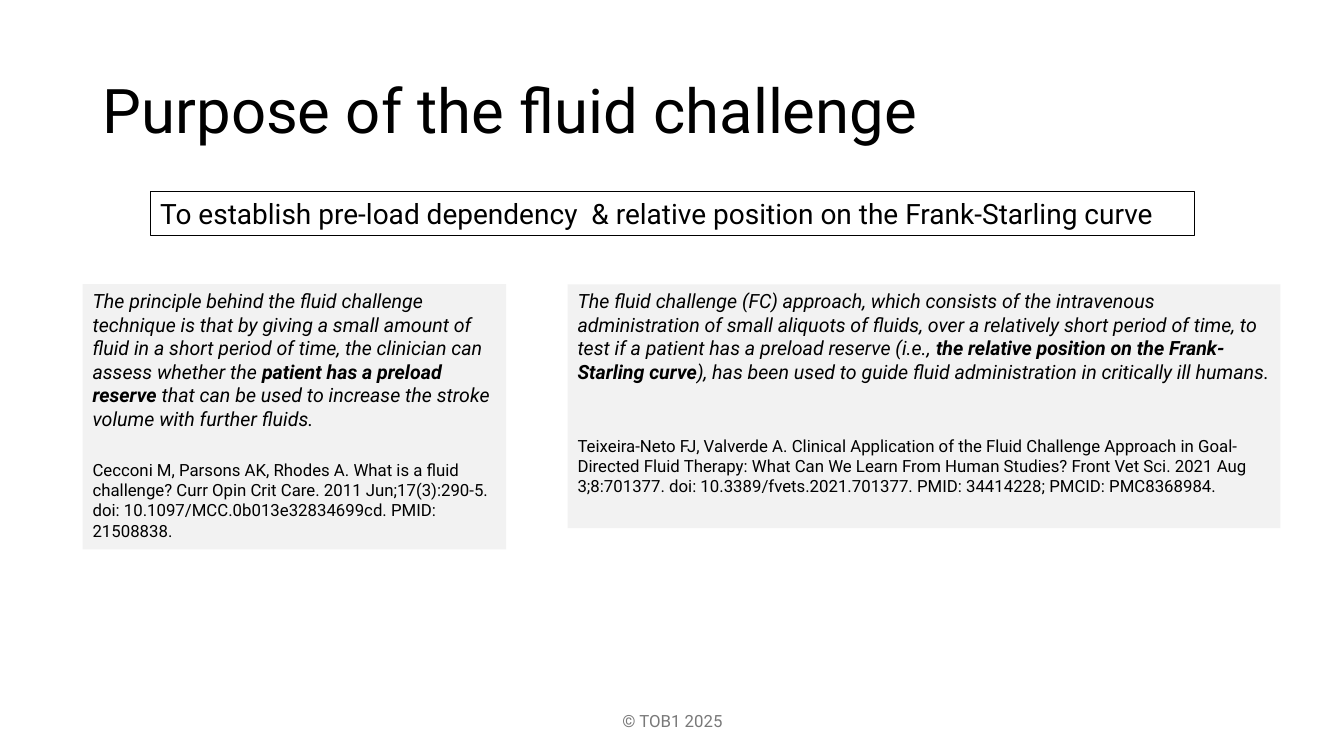
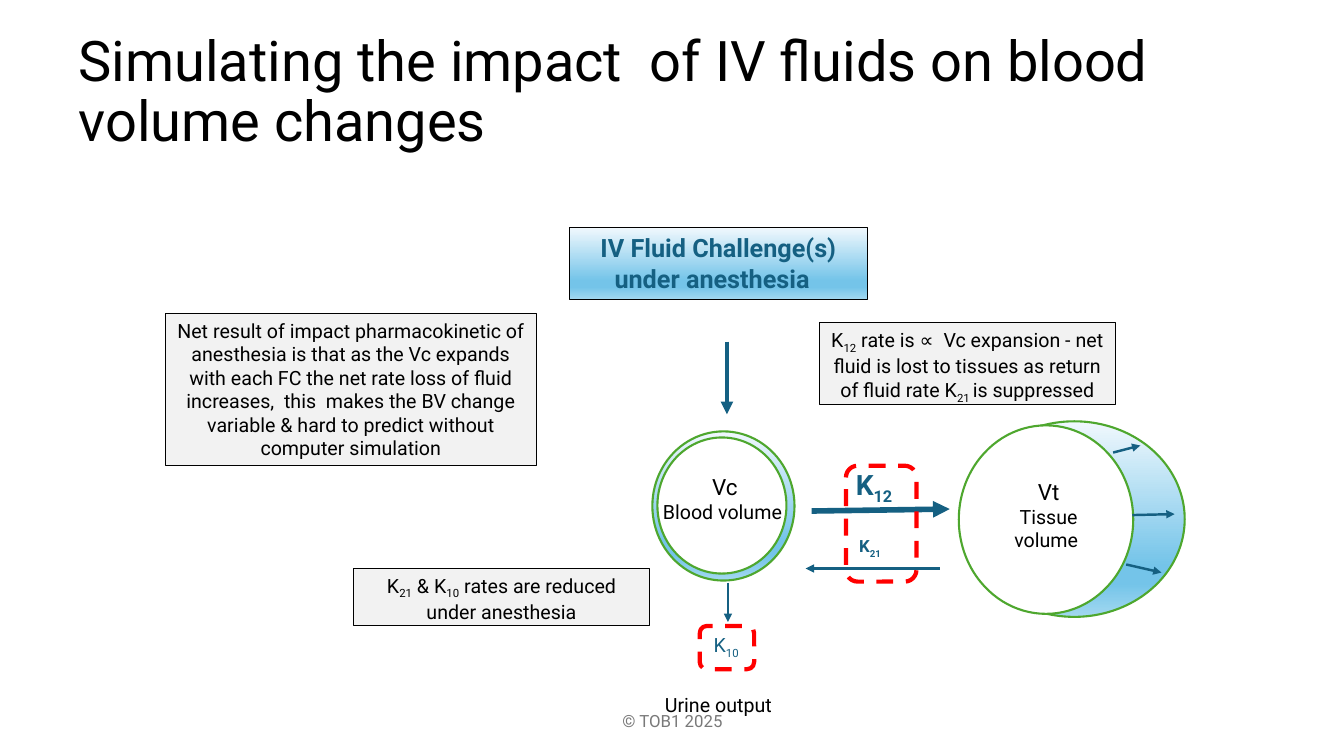
"""Build two slides on the fluid challenge and the simulation of blood volume changes."""
import pptx
import pptx.util
import pptx.dml.color
import pptx.enum.dml
import pptx.enum.shapes
import pptx.enum.text
import pptx.oxml.ns
import lxml.etree

Inches = pptx.util.Inches
Pt = pptx.util.Pt
RGBColor = pptx.dml.color.RGBColor
qn = pptx.oxml.ns.qn
SHAPE = pptx.enum.shapes.MSO_SHAPE
ALIGN = pptx.enum.text.PP_ALIGN
ANCHOR = pptx.enum.text.MSO_ANCHOR

FONT = "Roboto"
BLACK = RGBColor(0x00, 0x00, 0x00)
WHITE = RGBColor(0xFF, 0xFF, 0xFF)
GREY = RGBColor(0xF2, 0xF2, 0xF2)
FOOTER_GREY = RGBColor(0x79, 0x79, 0x79)
TEAL = RGBColor(0x15, 0x60, 0x82)
GREEN = RGBColor(0x4E, 0xA7, 0x2E)
RED = RGBColor(0xFF, 0x00, 0x00)
SKY = [
    (0, RGBColor(0xF0, 0xF8, 0xFD)),
    (74, RGBColor(0x74, 0xC4, 0xE9)),
    (83, RGBColor(0x74, 0xC4, 0xE9)),
    (100, RGBColor(0xA2, 0xD8, 0xF0)),
]


def add_text(tf, paras, color=BLACK, align=ALIGN.CENTER, anchor=ANCHOR.TOP):
    """Fill a frame with (size, runs) paragraphs; run flags are b, i and s for subscript."""
    tf.word_wrap = True
    tf.auto_size = pptx.enum.text.MSO_AUTO_SIZE.NONE
    tf.vertical_anchor = anchor
    for i, (size, runs) in enumerate(paras):
        p = tf.add_paragraph() if i else tf.paragraphs[0]
        p.alignment = align
        for text, flags in runs:
            r = p.add_run()
            r.text = text
            r.font.name = FONT
            r.font.size = Pt(size)
            r.font.color.rgb = color
            r.font.bold = "b" in flags
            r.font.italic = "i" in flags
            if "s" in flags:
                r._r.get_or_add_rPr().set("baseline", "-25000")


def add_box(s, kind, at, fill=None, line=None, width=0.75):
    """Add a preset shape with a plain, gradient or empty fill."""
    sp = s.shapes.add_shape(kind, *map(Inches, at))
    sp.shadow.inherit = False
    if fill is None:
        sp.fill.background()
    elif fill is SKY:
        sp.fill.gradient()
        sp.fill.gradient_angle = 270
        stops = sp._element.spPr.find(".//" + qn("a:gsLst"))
        for old in list(stops):
            stops.remove(old)
        for pos, color in SKY:
            gs = lxml.etree.SubElement(stops, qn("a:gs"), pos=str(pos * 1000))
            lxml.etree.SubElement(gs, qn("a:srgbClr"), val=str(color))
    else:
        sp.fill.solid()
        sp.fill.fore_color.rgb = fill
    if line is None:
        sp.line.fill.background()
    else:
        sp.line.color.rgb = line
        sp.line.width = Pt(width)
    return sp


prs = pptx.Presentation()
prs.slide_width = Inches(13.33)
prs.slide_height = Inches(7.5)

slides = []
for title, size, left, top in [
    ("Purpose of the fluid challenge", 44, 0.92, 0.4),
    ("Simulating the impact  of IV fluids on blood volume changes", 40, 0.68, 0.2),
]:
    s = prs.slides.add_slide(prs.slide_layouts[5])
    sp = s.shapes.title
    sp.left, sp.top, sp.width, sp.height = map(Inches, (left, top, 11.5, 1.45))
    add_text(sp.text_frame, [(size, [(title, "")])], align=ALIGN.LEFT, anchor=ANCHOR.MIDDLE)
    sp.text_frame.paragraphs[0].line_spacing = 0.9
    footer = s.shapes.add_textbox(*map(Inches, (4.42, 6.95, 4.5, 0.4)))
    add_text(footer.text_frame, [(12, [("© TOB1 2025", "")])], FOOTER_GREY, anchor=ANCHOR.MIDDLE)
    slides.append(s)

s = slides[0]
quotes = [
    ((0.82, 2.82, 4.2, 2.63), 21, [
        ("The principle behind the fluid challenge technique is that by giving a small amount of fluid "
         "in a short period of time, the clinician can assess whether the ", "i"),
        ("patient has a preload reserve", "bi"),
        (" that can be used to increase the stroke volume with further fluids.", "i")],
     "Cecconi M, Parsons AK, Rhodes A. What is a fluid challenge? Curr Opin Crit Care. "
     "2011 Jun;17(3):290-5. doi: 10.1097/MCC.0b013e32834699cd. PMID: 21508838."),
    ((5.63, 2.82, 7.07, 2.42), 37.5, [
        ("The fluid challenge (FC) approach, which consists of the intravenous administration of small "
         "aliquots of fluids, over a relatively short period of time, to test if a patient has a "
         "preload reserve (i.e., ", "i"),
        ("the relative position on the Frank-Starling curve", "bi"),
        ("), has been used to guide fluid administration in critically ill humans.", "i")],
     "Teixeira-Neto FJ, Valverde A. Clinical Application of the Fluid Challenge Approach in "
     "Goal-Directed Fluid Therapy: What Can We Learn From Human Studies? Front Vet Sci. "
     "2021 Aug 3;8:701377. doi: 10.3389/fvets.2021.701377. PMID: 34414228; PMCID: PMC8368984."),
]
for at, gap, quote, citation in quotes:
    tf = add_box(s, SHAPE.RECTANGLE, at, GREY).text_frame
    add_text(tf, [(14, quote), (12, [(citation, "")])], align=ALIGN.LEFT)
    tf.paragraphs[1].space_before = Pt(gap)

purpose = add_box(s, SHAPE.RECTANGLE, (1.49, 1.9, 10.36, 0.44), line=BLACK)
add_text(purpose.text_frame, [(20, [
    ("To establish pre-load dependency  & relative position on the Frank-Starling curve", "")])],
    align=ALIGN.LEFT)

s = slides[1]
for at, fill in [
    ((6.47, 4.28, 1.41, 1.48), SKY),
    ((9.56, 4.18, 2.19, 1.94), SKY),
    ((6.52, 4.34, 1.28, 1.35), WHITE),
    ((9.51, 4.22, 1.73, 1.87), WHITE),
]:
    add_box(s, SHAPE.OVAL, at, fill, GREEN, 1.5)

for at, color, align, paras in [
    ((6.42, 4.64, 1.54, 0.61), BLACK, ALIGN.CENTER,
     [(16, [("Vc", "")]), (14, [("Blood volume ", "")])]),
    ((9.74, 4.69, 1.32, 0.84), BLACK, ALIGN.CENTER,
     [(16, [("Vt", "")]), (14, [("Tissue volume ", "")])]),
    ((6.2, 6.82, 1.85, 0.39), BLACK, ALIGN.CENTER, [(14, [("Urine output", "")])]),
    ((8.39, 4.59, 0.73, 0.44), TEAL, ALIGN.LEFT, [(20, [("K", "b"), ("12", "bs")])]),
    ((8.36, 5.27, 0.54, 0.3), TEAL, ALIGN.CENTER, [(12, [("K", "b"), ("21", "bs")])]),
    ((6.98, 6.23, 0.54, 0.34), TEAL, ALIGN.LEFT, [(14, [("K", ""), ("10", "s")])]),
]:
    label = s.shapes.add_textbox(*map(Inches, at))
    add_text(label.text_frame, paras, color, align)

for start, end, width in [
    ((8.05, 5.07), (9.42, 5.05), 4),
    ((9.32, 5.64), (7.99, 5.64), 2),
    ((7.22, 5.78), (7.22, 6.17), 1.75),
    ((7.21, 3.39), (7.21, 4.11), 3),
    ((11.04, 4.49), (11.31, 4.42), 1.75),
    ((11.23, 5.11), (11.65, 5.1), 1.75),
    ((11.17, 5.6), (11.52, 5.68), 1.75),
]:
    arrow = s.shapes.add_connector(
        pptx.enum.shapes.MSO_CONNECTOR.STRAIGHT, *map(Inches, start + end))
    arrow.line.color.rgb = TEAL
    arrow.line.width = Pt(width)
    lxml.etree.SubElement(arrow.line._get_or_add_ln(), qn("a:tailEnd"), type="triangle")
    lxml.etree.SubElement(arrow._element.spPr, qn("a:effectLst"))

for at in [(8.39, 4.62, 0.7, 1.15), (6.94, 6.21, 0.54, 0.43)]:
    frame = add_box(s, SHAPE.ROUNDED_RECTANGLE, at, line=RED, width=3)
    frame.line.dash_style = pptx.enum.dml.MSO_LINE.DASH

for at, fill, color, size, runs in [
    ((5.65, 2.26, 2.95, 0.71), SKY, TEAL, 18,
     [("IV Fluid Challenge(s) under anesthesia  ", "b")]),
    ((8.13, 3.2, 2.93, 0.81), GREY, BLACK, 14,
     [("K", ""), ("12", "s"),
      (" rate is ∝  Vc expansion - net fluid is lost to tissues as return of fluid rate K", ""),
      ("21 ", "s"), ("is suppressed", "")]),
    ((1.64, 3.11, 3.68, 1.51), GREY, BLACK, 14,
     [("Net result of impact pharmacokinetic of anesthesia is that as the Vc expands with each FC "
       "the net rate loss of fluid increases,  this  makes the BV change variable & hard to predict "
       "without computer simulation", "")]),
    ((3.51, 5.64, 2.93, 0.57), GREY, BLACK, 14,
     [("K", ""), ("21", "s"), (" & K", ""), ("10", "s"),
      (" rates are reduced under anesthesia", "")]),
]:
    note = add_box(s, SHAPE.RECTANGLE, at, fill, BLACK)
    add_text(note.text_frame, [(size, runs)], color)

prs.save("out.pptx")
